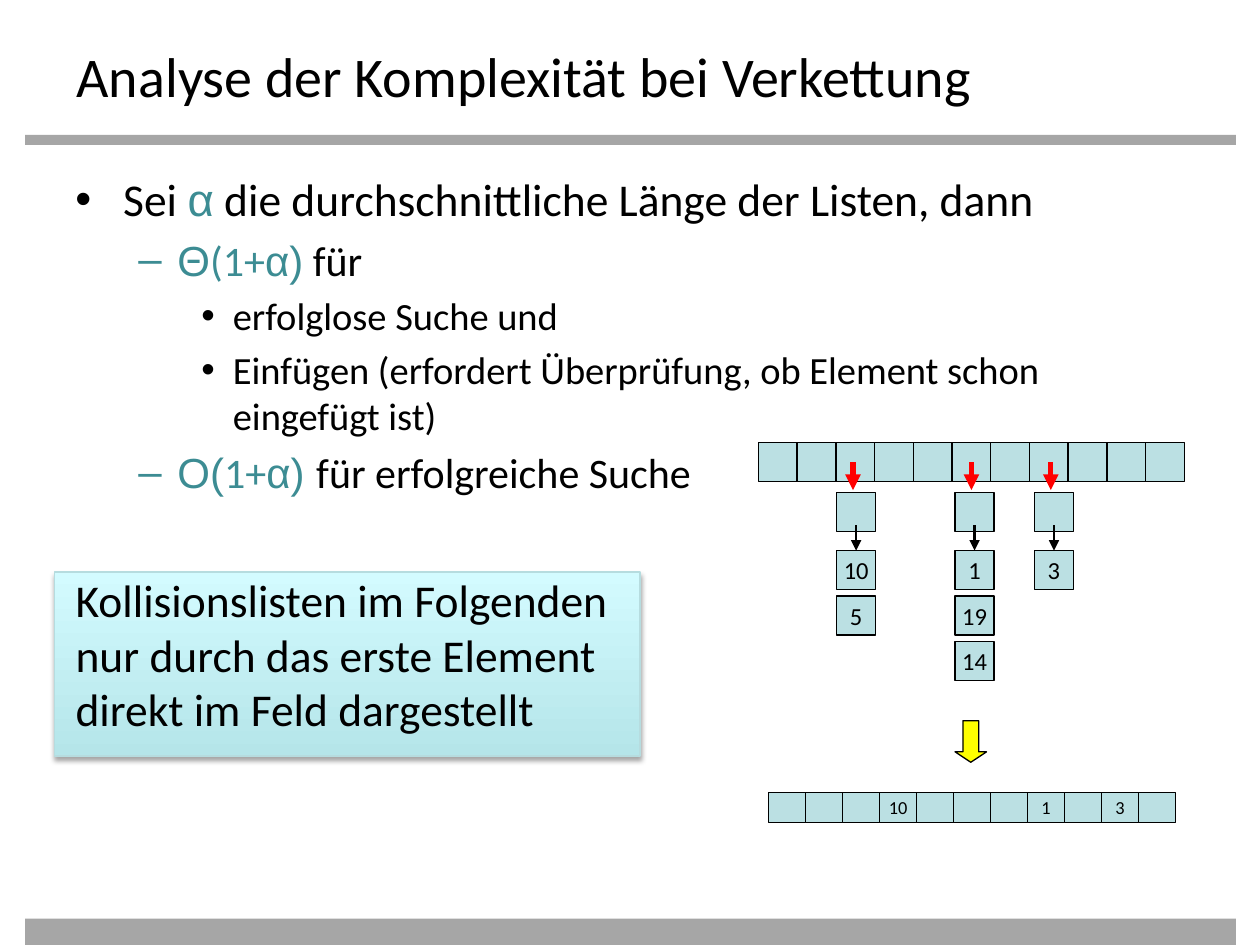
from typing import NamedTuple

from lxml import etree
from pptx import Presentation
from pptx.dml.color import RGBColor
from pptx.enum.shapes import MSO_CONNECTOR as CONN, MSO_SHAPE as SHAPE
from pptx.enum.text import MSO_ANCHOR as ANCHOR, PP_ALIGN as ALIGN
from pptx.oxml.ns import qn
from pptx.util import Inches, Pt

BLACK, TEAL, CELL, GREY, RED = "000000", "3C8C93", "BBE0E3", "A6A6A6", "FF0000"


class Run(NamedTuple):
    text: str
    color: str = BLACK
    font: str = "Calibri"


class Bullet(NamedTuple):
    level: int
    runs: list[Run]


class Level(NamedTuple):
    size: float
    margin: float
    hang: float
    char: str


class Chain(NamedTuple):
    x: float
    keys: list[str]


LEVELS = [Level(26, 0.38, 0.38, "•"), Level(24, 0.81, 0.31, "–"), Level(22, 1.25, 0.25, "•")]
BULLETS = [
    Bullet(0, [Run("Sei "), Run("α", TEAL, "Arial"),
               Run(" die durchschnittliche Länge der Listen, dann")]),
    Bullet(1, [Run("Θ", TEAL, "Arial"), Run("(1+", TEAL), Run("α)", TEAL, "Arial"), Run(" für")]),
    Bullet(2, [Run("erfolglose Suche und")]),
    Bullet(2, [Run("Einfügen (erfordert Überprüfung, ob Element schon eingefügt ist)")]),
    Bullet(1, [Run("Ο(", TEAL, "Arial"), Run("1+", TEAL), Run("α) ", TEAL, "Arial"),
               Run("für erfolgreiche Suche")]),
]
NOTE = ["Kollisionslisten im Folgenden ", "nur durch das erste Element ",
        "direkt im Feld dargestellt"]
CHAINS = [Chain(6.64, ["10", "5"]), Chain(7.58, ["1", "19", "14"]), Chain(8.21, ["3"])]
SLOTS = 11
BOX = 0.31


def rgb(color: str) -> RGBColor:
    return RGBColor.from_string(color)


def add_run(p, run: Run, size: float) -> None:
    r = p.add_run()
    r.text = run.text
    r.font.name, r.font.size = run.font, Pt(size)
    r.font.color.rgb = rgb(run.color)


def add_box(s, x: float, y: float, w: float, h: float, fill: str = CELL,
            line: str | None = BLACK, kind=SHAPE.RECTANGLE):
    sp = s.shapes.add_shape(kind, Inches(x), Inches(y), Inches(w), Inches(h))
    sp.shadow.inherit = False
    sp.fill.solid()
    sp.fill.fore_color.rgb = rgb(fill)
    if line:
        sp.line.color.rgb = rgb(line)
        sp.line.width = Pt(0.75)
    else:
        sp.line.fill.background()
    return sp


def add_cell(s, x: float, y: float, w: float, h: float, key: str = "", size: float = 14):
    sp = add_box(s, x, y, w, h)
    if key:
        tf = sp.text_frame
        tf.word_wrap = False
        tf.vertical_anchor = ANCHOR.MIDDLE
        tf.margin_left = tf.margin_right = tf.margin_top = tf.margin_bottom = 0
        p = tf.paragraphs[0]
        p.alignment = ALIGN.CENTER
        add_run(p, Run(key), size)
    return sp


def add_array(s, x: float, y: float, w: float, h: float, keys: dict[int, str]) -> None:
    step = w / SLOTS
    for i in range(SLOTS):
        add_cell(s, x + i * step, y, step, h, keys.get(i, ""), 10.5)


def add_arrow(s, x: float, y1: float, y2: float, color: str, width: float):
    c = s.shapes.add_connector(CONN.STRAIGHT, Inches(x), Inches(y1), Inches(x), Inches(y2))
    c.line.color.rgb = rgb(color)
    c.line.width = Pt(width)
    etree.SubElement(c.line._get_or_add_ln(), qn("a:tailEnd"), type="triangle")
    etree.SubElement(c._element.spPr, qn("a:effectLst"))
    return c


def add_text(s, x: float, y: float, w: float, h: float):
    tf = s.shapes.add_textbox(Inches(x), Inches(y), Inches(w), Inches(h)).text_frame
    tf.word_wrap = True
    return tf


def add_bullets(tf, bullets: list[Bullet]) -> None:
    for i, bullet in enumerate(bullets):
        level = LEVELS[bullet.level]
        p = tf.add_paragraph() if i else tf.paragraphs[0]
        p.level = bullet.level
        p.space_before = Pt(0.2 * level.size if i else 0)
        pPr = p._p.get_or_add_pPr()
        pPr.set("marL", str(Inches(level.margin)))
        pPr.set("indent", str(-Inches(level.hang)))
        etree.SubElement(pPr, qn("a:buFont"), typeface="Arial")
        etree.SubElement(pPr, qn("a:buChar"), char=level.char)
        for run in bullet.runs:
            add_run(p, run, level.size)


def add_note(s, lines: list[str]) -> None:
    sp = add_box(s, 0.43, 4.54, 4.65, 1.46, line="B6DCDF")
    sp.fill.gradient()
    sp.fill.gradient_angle = 90
    for stop, color in zip(sp.fill.gradient_stops, ("B5E5E9", "D3FBFF")):
        stop.color.rgb = rgb(color)
    # Soft shadow below the note
    effects = sp._element.spPr.find(qn("a:effectLst"))
    shadow = etree.SubElement(effects, qn("a:outerShdw"), blurRad=str(Pt(3.1)),
                              dist=str(Pt(1.8)), dir="5400000", rotWithShape="0")
    color = etree.SubElement(shadow, qn("a:srgbClr"), val=BLACK)
    etree.SubElement(color, qn("a:alpha"), val="35000")

    tf = sp.text_frame
    tf.word_wrap = True
    tf.vertical_anchor = ANCHOR.TOP
    tf.margin_left, tf.margin_top = Inches(0.17), 0
    p = tf.paragraphs[0]
    p.alignment = ALIGN.LEFT
    for i, line in enumerate(lines):
        if i:
            p.add_line_break()
        add_run(p, Run(line), 26)


def main() -> None:
    prs = Presentation()
    prs.slide_width, prs.slide_height = Inches(10), Inches(7.5)
    s = prs.slides.add_slide(prs.slide_layouts[6])

    # Grey bars
    for y, h in ((1.07, 0.08), (7.29, 0.21)):
        add_box(s, 0.2, y, 9.61, h, GREY, None)

    # Title, bullets and note
    title = add_text(s, 0.51, 0.28, 9, 0.55)
    add_run(title.paragraphs[0], Run("Analyse der Komplexität bei Verkettung"), 32)
    add_bullets(add_text(s, 0.5, 1.31, 9, 2.8), BULLETS)
    add_note(s, NOTE)

    # Hash table with collision lists
    add_array(s, 6.02, 3.51, 3.38, BOX, {})
    for chain in CHAINS:
        add_arrow(s, chain.x + 0.13, 3.67, 3.89, RED, 3)
        add_cell(s, chain.x, 3.91, BOX, BOX)
        cells = [add_cell(s, chain.x, 4.37 + 0.36 * i, BOX, BOX, key)
                 for i, key in enumerate(chain.keys)]
        arrow = add_arrow(s, chain.x + BOX / 2, 4.17, 4.37, BLACK, 1.5)
        arrow.end_connect(cells[0], 0)

    # Simplified table showing only the first elements
    down = add_box(s, 7.58, 5.72, 0.25, 0.33, "FFFF00", kind=SHAPE.DOWN_ARROW)
    down.adjustments[0], down.adjustments[1] = 0.5, 0.33
    add_array(s, 6.1, 6.29, 3.23, 0.24, {3: "10", 7: "1", 9: "3"})

    prs.save("out.pptx")


if __name__ == "__main__":
    main()
